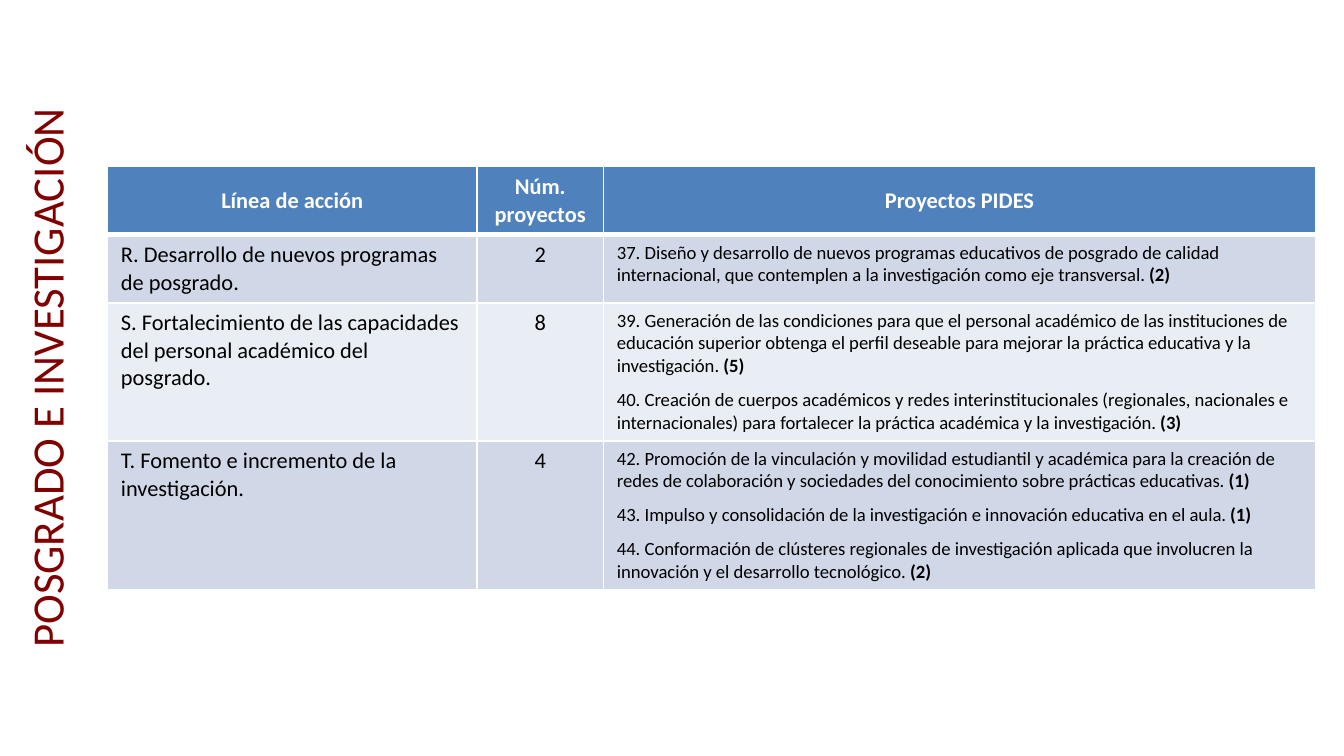
from lxml.etree import SubElement
from pptx import Presentation
from pptx.dml.color import RGBColor
from pptx.enum.text import MSO_ANCHOR as ANCHOR, PP_ALIGN as ALIGN
from pptx.oxml.ns import qn
from pptx.util import Inches, Pt

SLIDE_W = 10
SLIDE_H = SLIDE_W * 9 / 16
HEADERS = ["Línea de acción", "Núm. proyectos", "Proyectos PIDES"]
ROWS = [
    ("R. Desarrollo de nuevos programas de posgrado.", 2, [
        ("37. Diseño y desarrollo de nuevos programas educativos de posgrado de calidad "
         "internacional, que contemplen a la investigación como eje transversal.", 2),
    ]),
    ("S. Fortalecimiento de las capacidades del personal académico del posgrado.", 8, [
        ("39. Generación de las condiciones para que el personal académico de las "
         "instituciones de educación superior obtenga el perfil deseable para mejorar "
         "la práctica educativa y la investigación.", 5),
        ("40. Creación de cuerpos académicos y redes interinstitucionales (regionales, "
         "nacionales e internacionales) para fortalecer la práctica académica y la "
         "investigación.", 3),
    ]),
    ("T. Fomento e incremento de la investigación.", 4, [
        ("42. Promoción de la vinculación y movilidad estudiantil y académica para la "
         "creación de redes de colaboración y sociedades del conocimiento sobre "
         "prácticas educativas.", 1),
        ("43. Impulso y consolidación de la investigación e innovación educativa en el "
         "aula.", 1),
        ("44. Conformación de clústeres regionales de investigación aplicada que "
         "involucren la innovación y el desarrollo tecnológico.", 2),
    ]),
]
COL_WIDTHS = [2.75, 0.94, 5.3]
ROW_HEIGHT = 0.41
HEADER_FILL = "4F81BD"
BAND_FILLS = ["D0D8E8", "E9EDF4"]
HEADER_BORDERS = {"lnL": 1, "lnR": 1, "lnT": 1, "lnB": 3}


def rgb(value):
    """Return the colour for a hex string."""
    return RGBColor.from_string(value)


def add_text(p, text, size=12, color="000000", bold=False, align=ALIGN.LEFT):
    """Append a formatted run to a paragraph."""
    p.alignment = align
    r = p.add_run()
    r.text = text
    r.font.name = "Calibri"
    r.font.size = Pt(size)
    r.font.bold = bold
    r.font.color.rgb = rgb(color)


def set_borders(cell, widths, color="FFFFFF"):
    """Draw solid cell borders, given as widths in points by side."""
    props = cell._tc.get_or_add_tcPr()
    for side, width in widths.items():
        ln = SubElement(props, qn(f"a:{side}"), w=str(Pt(width)))
        fill = SubElement(ln, qn("a:solidFill"))
        SubElement(fill, qn("a:srgbClr"), val=color)


def fill_cell(cell, color, anchor=ANCHOR.TOP):
    """Colour a cell, anchor its text and return its first paragraph."""
    cell.fill.solid()
    cell.fill.fore_color.rgb = rgb(color)
    cell.vertical_anchor = anchor
    return cell.text_frame.paragraphs[0]


def add_projects(cell, color, projects):
    """List projects in a cell, each followed by its bold count."""
    p = fill_cell(cell, color)
    for i, (name, count) in enumerate(projects):
        if i:
            p = cell.text_frame.add_paragraph()
        p.space_before = p.space_after = Pt(3)
        add_text(p, f"{name} ", size=10)
        add_text(p, f"({count})", size=10, bold=True)


def add_side_title(s, text, x, y, w, h):
    """Turn the title placeholder upright within the given box."""
    sp = s.shapes.title
    sp.left, sp.top = Inches(x + (w - h) / 2), Inches(y + (h - w) / 2)
    sp.width, sp.height = Inches(h), Inches(w)
    sp.rotation = 270
    tf = sp.text_frame
    tf.word_wrap = True
    tf.vertical_anchor = ANCHOR.MIDDLE
    add_text(tf.paragraphs[0], text, size=24, color="800000", align=ALIGN.CENTER)


def add_project_table(s, x, y, w, h):
    """Place the table of action lines and projects in the given box."""
    frame = s.shapes.add_table(
        len(ROWS) + 1, len(HEADERS), Inches(x), Inches(y), Inches(w), Inches(h))
    table = frame.table
    for column, width in zip(table.columns, COL_WIDTHS):
        column.width = Inches(width)
    for row in table.rows:
        row.height = Inches(ROW_HEIGHT)
    frame.height = Inches(h)
    for c, header in enumerate(HEADERS):
        cell = table.cell(0, c)
        set_borders(cell, HEADER_BORDERS)
        p = fill_cell(cell, HEADER_FILL, ANCHOR.MIDDLE)
        add_text(p, header, color="FFFFFF", bold=True, align=ALIGN.CENTER)
    for i, (line, count, projects) in enumerate(ROWS):
        color = BAND_FILLS[i % 2]
        line_cell, count_cell, projects_cell = table.rows[i + 1].cells
        add_text(fill_cell(line_cell, color), line)
        add_text(fill_cell(count_cell, color), str(count), align=ALIGN.CENTER)
        add_projects(projects_cell, color, projects)


def main():
    """Build and save the slide."""
    prs = Presentation()
    prs.slide_width, prs.slide_height = Inches(SLIDE_W), Inches(SLIDE_H)
    s = prs.slides.add_slide(prs.slide_layouts[5])
    add_side_title(s, "POSGRADO E INVESTIGACIÓN", -0.13, 0, 0.94, SLIDE_H)
    add_project_table(s, 0.8, 1.24, sum(COL_WIDTHS), 3.12)
    prs.save("out.pptx")


if __name__ == "__main__":
    main()
